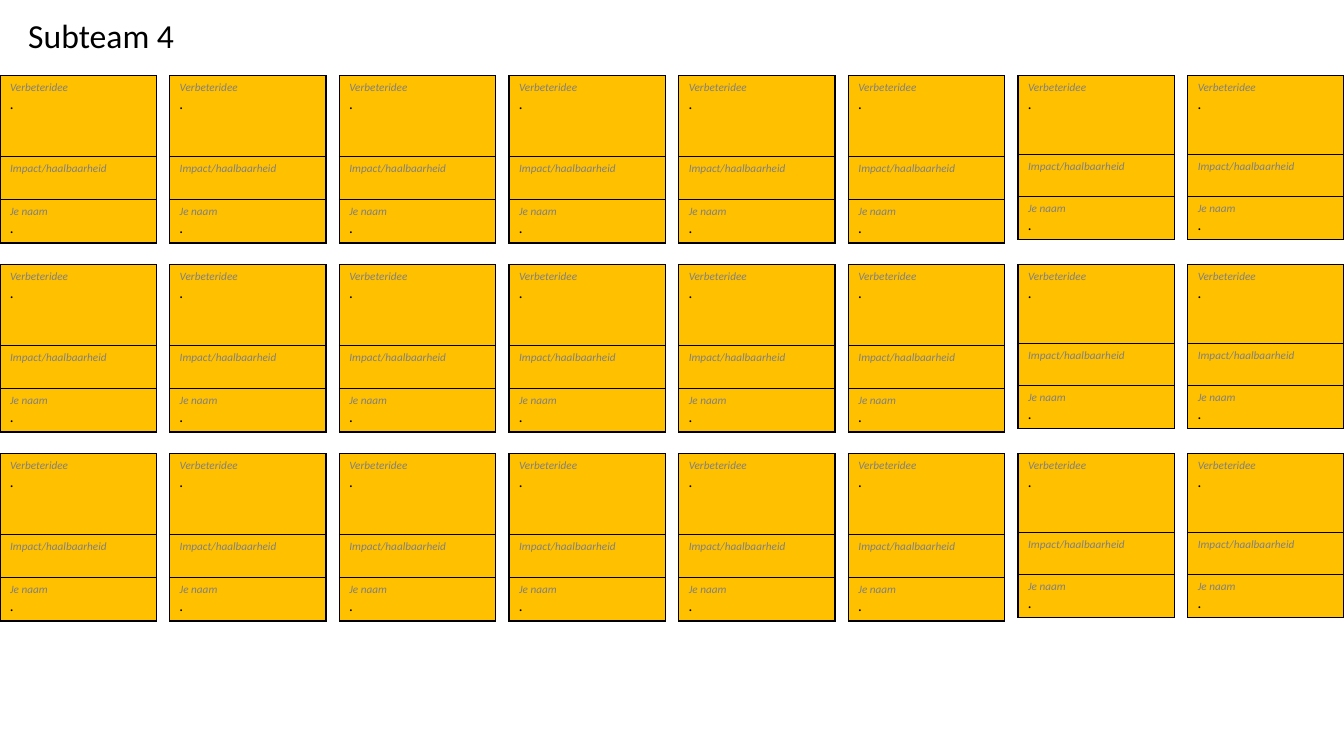
from itertools import product

from lxml.etree import SubElement
from pptx import Presentation
from pptx.dml.color import RGBColor as RGB
from pptx.enum.text import MSO_ANCHOR as ANCHOR, PP_ALIGN as ALIGN
from pptx.oxml.ns import qn
from pptx.util import Inches, Pt

COLORS = {"card": "FFC000", "label": "808080", "ink": "000000"}
FONT = "Calibri"

prs = Presentation()
prs.slide_width, prs.slide_height = Inches(13.33), Inches(7.5)
W, H = prs.slide_width, prs.slide_height
s = prs.slides.add_slide(prs.slide_layouts[5])


def style_text(p, size, color, italic=False):
    p.alignment = ALIGN.LEFT
    for r in p.runs:
        r.font.name, r.font.size, r.font.italic = FONT, Pt(size), italic
        r.font.color.rgb = RGB.from_string(COLORS[color])


def style_cell(cell):
    tcPr = cell._tc.get_or_add_tcPr()
    for side in ("lnL", "lnR", "lnT", "lnB"):
        ln = SubElement(tcPr, qn(f"a:{side}"), w=str(Pt(1)))
        line_fill = SubElement(ln, qn("a:solidFill"))
        SubElement(line_fill, qn("a:srgbClr"), val=COLORS["ink"])
    cell.fill.solid()
    cell.fill.fore_color.rgb = RGB.from_string(COLORS["card"])


# Title
title = s.shapes.title
title.left, title.top = Inches(0.18), Inches(0.1)
title.width, title.height = Inches(1.66), Inches(0.5)
tf = title.text_frame
tf.text = "Subteam 4"
tf.word_wrap = False
tf.vertical_anchor = ANCHOR.TOP
style_text(tf.paragraphs[0], 24, "ink")

# Grid of idea cards, spread over the full width
COLS, ROWS = 8, 3
card_w = Inches(1.55)
pitch_x, pitch_y = (W - card_w) / (COLS - 1), H / 4
top = H / 10
fields = ["Verbeteridee\n.", "Impact/haalbaarheid", "Je naam\n."]

for row, col in product(range(ROWS), range(COLS)):
    # Cards in the last two columns are slightly shorter
    heights = (0.78, 0.42, 0.42) if col >= COLS - 2 else (0.8, 0.43, 0.43)
    frame = s.shapes.add_table(len(fields), 1, int(col * pitch_x),
                               int(top + row * pitch_y), card_w, Inches(sum(heights)))
    table = frame.table
    table.first_row = table.horz_banding = False
    for i, (text, height) in enumerate(zip(fields, heights)):
        table.rows[i].height = Inches(height)
        cell = table.cell(i, 0)
        style_cell(cell)
        cell.text_frame.text = text
        label, *answer = cell.text_frame.paragraphs
        style_text(label, 8, "label", italic=True)
        for p in answer:
            style_text(p, 11, "ink", italic=True)

prs.save("out.pptx")
